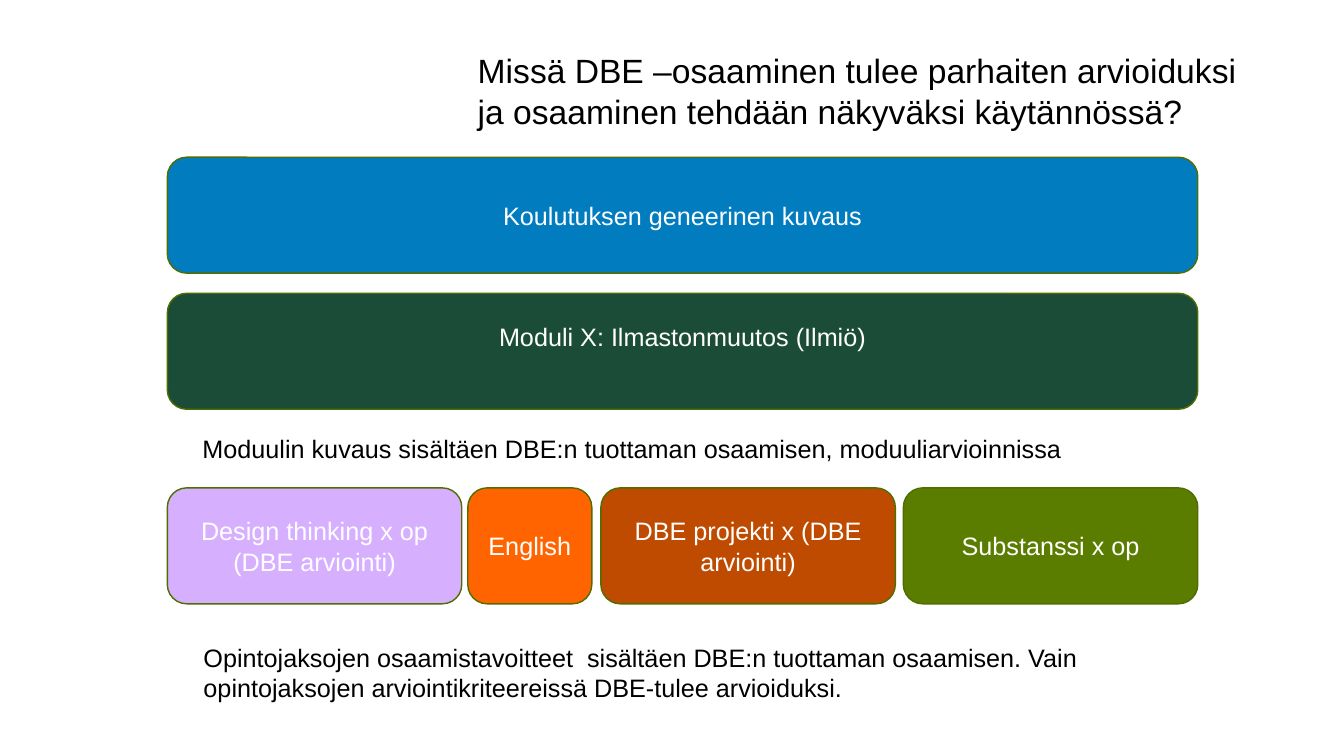
"""Build the slide on where DBE competence is assessed and made visible."""
from dataclasses import dataclass

from pptx import Presentation
from pptx.dml.color import RGBColor
from pptx.enum.shapes import MSO_SHAPE as Shape
from pptx.enum.text import MSO_ANCHOR as Anchor, PP_ALIGN as Align
from pptx.slide import Slide
from pptx.text.text import TextFrame
from pptx.util import Inches, Pt

BLACK = RGBColor(0x00, 0x00, 0x00)
WHITE = RGBColor(0xFF, 0xFF, 0xFF)
OUTLINE = RGBColor(0x4F, 0x6E, 0x00)
BLUE = RGBColor(0x00, 0x7C, 0xBF)
DARK_GREEN = RGBColor(0x1B, 0x4C, 0x37)
LILAC = RGBColor(0xD7, 0xAF, 0xFF)
ORANGE = RGBColor(0xFF, 0x64, 0x00)
RUST = RGBColor(0xBF, 0x4B, 0x00)
GREEN = RGBColor(0x5A, 0x7D, 0x00)

FONT = "Arial"
BODY_SIZE = 18
TITLE_SIZE = 24
BLOCK_HEIGHT = 1.15
LEFT_EDGE = 1.66
FULL_WIDTH = 10.22
COURSE_WIDTH = 2.92
COURSE_TOP = 4.84


@dataclass(frozen=True)
class Block:
    text: str
    left: float
    top: float
    width: float
    fill: RGBColor
    bottom_inset: float = 0.05


@dataclass(frozen=True)
class Caption:
    text: str
    left: float
    top: float
    width: float
    height: float
    size: int = BODY_SIZE


BLOCKS = (
    Block("Koulutuksen geneerinen kuvaus", LEFT_EDGE, 1.56, FULL_WIDTH, BLUE),
    Block("Moduli X: Ilmastonmuutos (Ilmiö)", LEFT_EDGE, 2.91, FULL_WIDTH,
          DARK_GREEN, bottom_inset=0.35),
    Block("Design thinking x op (DBE arviointi)", LEFT_EDGE, COURSE_TOP,
          COURSE_WIDTH, LILAC),
    Block("English", 4.64, COURSE_TOP, 1.23, ORANGE),
    Block("DBE projekti x (DBE arviointi)", 5.96, COURSE_TOP, COURSE_WIDTH, RUST),
    Block("Substanssi x op", 8.96, COURSE_TOP, COURSE_WIDTH, GREEN),
)

CAPTIONS = (
    Caption("Missä DBE –osaaminen tulee parhaiten arvioiduksi ja osaaminen "
            "tehdään näkyväksi käytännössä?", 4.64, 0.45, 8.07, 0.91, TITLE_SIZE),
    Caption("Moduulin kuvaus sisältäen DBE:n tuottaman osaamisen, "
            "moduuliarvioinnissa", 1.91, 4.25, 9.67, 0.4),
    Caption("Opintojaksojen osaamistavoitteet  sisältäen DBE:n tuottaman "
            "osaamisen. Vain opintojaksojen arviointikriteereissä DBE-tulee "
            "arvioiduksi.", 1.92, 6.32, 9.96, 0.71),
)


def write_text(text_frame: TextFrame, text: str, size: int, color: RGBColor,
               alignment: Align) -> None:
    """Fill a text frame with one wrapped, formatted paragraph."""
    text_frame.word_wrap = True
    text_frame.text = text
    paragraph = text_frame.paragraphs[0]
    paragraph.alignment = alignment
    for run in paragraph.runs:
        run.font.name = FONT
        run.font.size = Pt(size)
        run.font.color.rgb = color


def draw_block(slide: Slide, block: Block) -> None:
    """Draw a rounded, coloured block with centred white text."""
    shape = slide.shapes.add_shape(
        Shape.ROUNDED_RECTANGLE, Inches(block.left), Inches(block.top),
        Inches(block.width), Inches(BLOCK_HEIGHT))
    shape.shadow.inherit = False
    shape.fill.solid()
    shape.fill.fore_color.rgb = block.fill
    shape.line.color.rgb = OUTLINE
    shape.line.width = Pt(1)
    text_frame = shape.text_frame
    text_frame.vertical_anchor = Anchor.MIDDLE
    text_frame.margin_bottom = Inches(block.bottom_inset)
    write_text(text_frame, block.text, BODY_SIZE, WHITE, Align.CENTER)


def draw_caption(slide: Slide, caption: Caption) -> None:
    """Draw a left-aligned black caption."""
    text_box = slide.shapes.add_textbox(
        Inches(caption.left), Inches(caption.top),
        Inches(caption.width), Inches(caption.height))
    write_text(text_box.text_frame, caption.text, caption.size, BLACK, Align.LEFT)


def main() -> None:
    """Create the presentation and save it."""
    presentation = Presentation()
    presentation.slide_width = Inches(13.33)
    presentation.slide_height = Inches(7.5)
    slide = presentation.slides.add_slide(presentation.slide_layouts[6])
    for block in BLOCKS:
        draw_block(slide, block)
    for caption in CAPTIONS:
        draw_caption(slide, caption)
    presentation.save("out.pptx")


if __name__ == "__main__":
    main()
